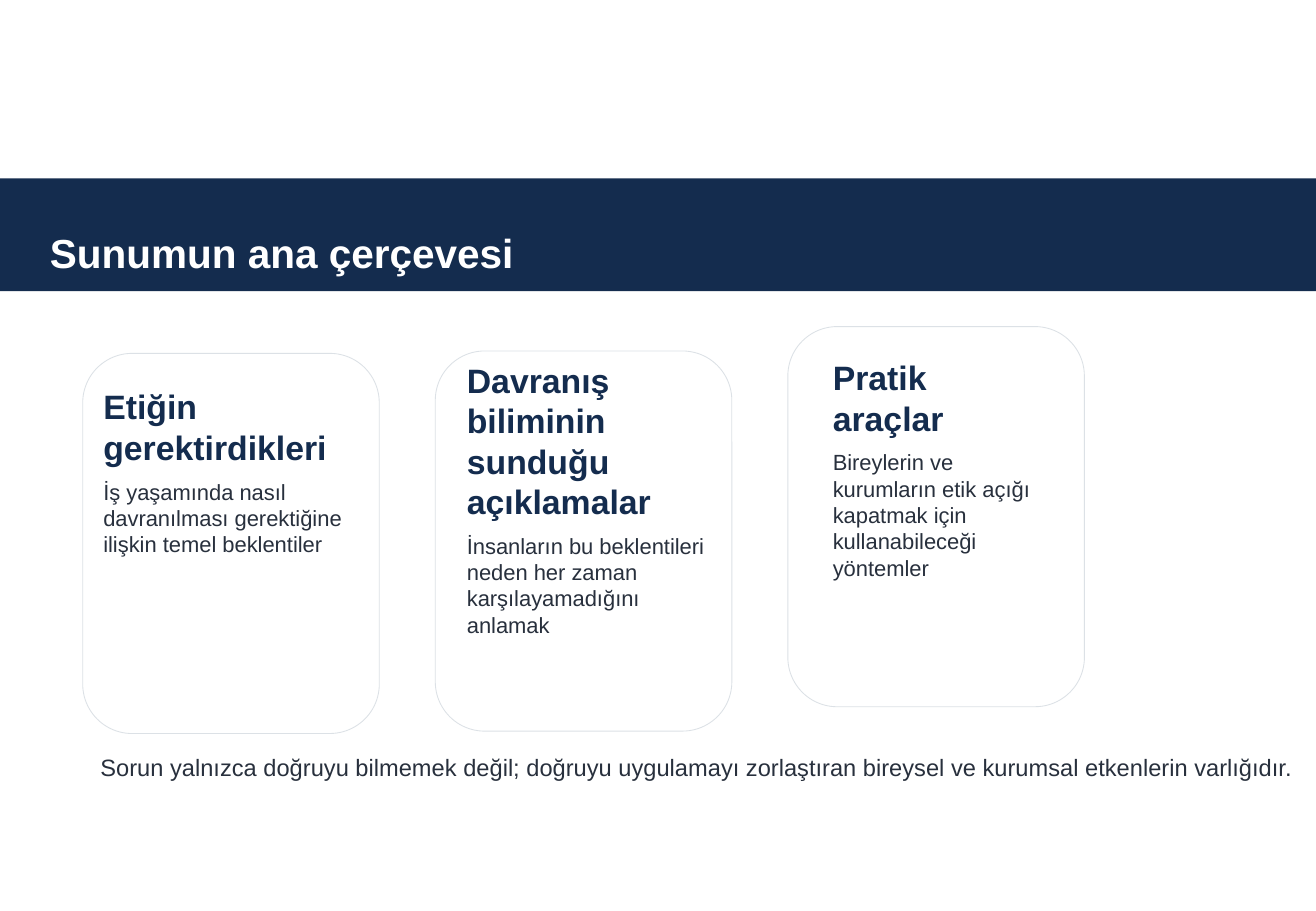
from lxml import etree
from pptx import Presentation
from pptx.dml.color import RGBColor
from pptx.enum.shapes import MSO_SHAPE
from pptx.enum.text import MSO_ANCHOR, PP_ALIGN
from pptx.util import Cm, Pt

RECTANGLE = MSO_SHAPE.RECTANGLE
ROUNDED = MSO_SHAPE.ROUNDED_RECTANGLE
BOTTOM = MSO_ANCHOR.BOTTOM
TOP = MSO_ANCHOR.TOP
LEFT = PP_ALIGN.LEFT

FONT = "Arial"
COLORS = {
    "navy": "142C4E",
    "text": "28303D",
    "border": "DCE1E6",
    "white": "FFFFFF",
}
SLIDE_WIDTH, SLIDE_HEIGHT = 27.51, 19.05
CARD_LEFT, CARD_STEP = 1.73, 7.37
CARD_WIDTH, CARD_HEIGHT = 6.2, 7.95

CARDS = [
    {
        "top": 7.39,
        "text_box": (0.18, 0.56, 5.82, 3.89),
        "heading": "Etiğin gerektirdikleri",
        "body": "İş yaşamında nasıl davranılması gerektiğine ilişkin temel beklentiler",
    },
    {
        "top": 7.34,
        "text_box": (0.41, 0.05, 5.64, 6.15),
        "heading": "Davranış biliminin sunduğu açıklamalar",
        "body": "İnsanların bu beklentileri neden her zaman karşılayamadığını anlamak",
    },
    {
        "top": 6.83,
        "text_box": (0.69, 0.51, 4.8, 5),
        "heading": "Pratik araçlar",
        "body": "Bireylerin ve kurumların etik açığı kapatmak için kullanabileceği yöntemler",
    },
]
CONCLUSION = (
    "Sorun yalnızca doğruyu bilmemek değil; doğruyu uygulamayı zorlaştıran "
    "bireysel ve kurumsal etkenlerin varlığıdır."
)


def color(name):
    return RGBColor.from_string(COLORS[name])


def format_paragraph(paragraph, size, color_name, bold=False):
    paragraph.alignment = LEFT
    paragraph.font.name = FONT
    paragraph.font.size = Pt(size)
    paragraph.font.bold = bold
    paragraph.font.color.rgb = color(color_name)


def add_panel(slide, kind, box, fill, border=None):
    shape = slide.shapes.add_shape(kind, *map(Cm, box))
    shape.shadow.inherit = False
    shape.fill.solid()
    shape.fill.fore_color.rgb = color(fill)
    if border:
        shape.line.color.rgb = color(border)
        shape.line.width = Pt(0.5)
    else:
        shape.line.fill.background()
    return shape


def add_text_frame(slide, box):
    frame = slide.shapes.add_textbox(*map(Cm, box)).text_frame
    frame.word_wrap = True
    frame.vertical_anchor = TOP
    return frame


def add_title_band(slide, box, text):
    left, top, width, height = box
    band = add_panel(slide, RECTANGLE, box, "navy")
    title = slide.shapes.title
    title.element.addprevious(band.element)
    title.left, title.top = Cm(left + 0.79), Cm(top)
    title.width, title.height = Cm(width - 1.58), Cm(height - 0.17)
    frame = title.text_frame
    frame.text = text
    frame.vertical_anchor = BOTTOM
    format_paragraph(frame.paragraphs[0], 24, "white", bold=True)


def add_card(slide, box, card):
    left, top = box[:2]
    add_panel(slide, ROUNDED, box, "white", "border")
    text_left, text_top, width, height = card["text_box"]
    frame = add_text_frame(slide, (left + text_left, top + text_top, width, height))
    heading = frame.paragraphs[0]
    heading.text = card["heading"]
    heading.space_after = Pt(6.5)
    format_paragraph(heading, 20, "navy", bold=True)
    body = frame.add_paragraph()
    body.text = card["body"]
    format_paragraph(body, 13, "text")


def add_conclusion(slide, box):
    paragraph = add_text_frame(slide, box).paragraphs[0]
    paragraph.text = CONCLUSION
    format_paragraph(paragraph, 14, "text")


def main():
    presentation = Presentation()
    presentation.slide_width = Cm(SLIDE_WIDTH)
    presentation.slide_height = Cm(SLIDE_HEIGHT)
    slide = presentation.slides.add_slide(presentation.slide_layouts[5])
    add_title_band(slide, (0, 3.73, SLIDE_WIDTH, 2.36), "Sunumun ana çerçevesi")
    for index, card in enumerate(CARDS):
        left = CARD_LEFT + index * CARD_STEP
        add_card(slide, (left, card["top"], CARD_WIDTH, CARD_HEIGHT), card)
    add_conclusion(slide, (1.85, 15.62, 25.55, 1.93))
    presentation.save("out.pptx")


if __name__ == "__main__":
    main()
